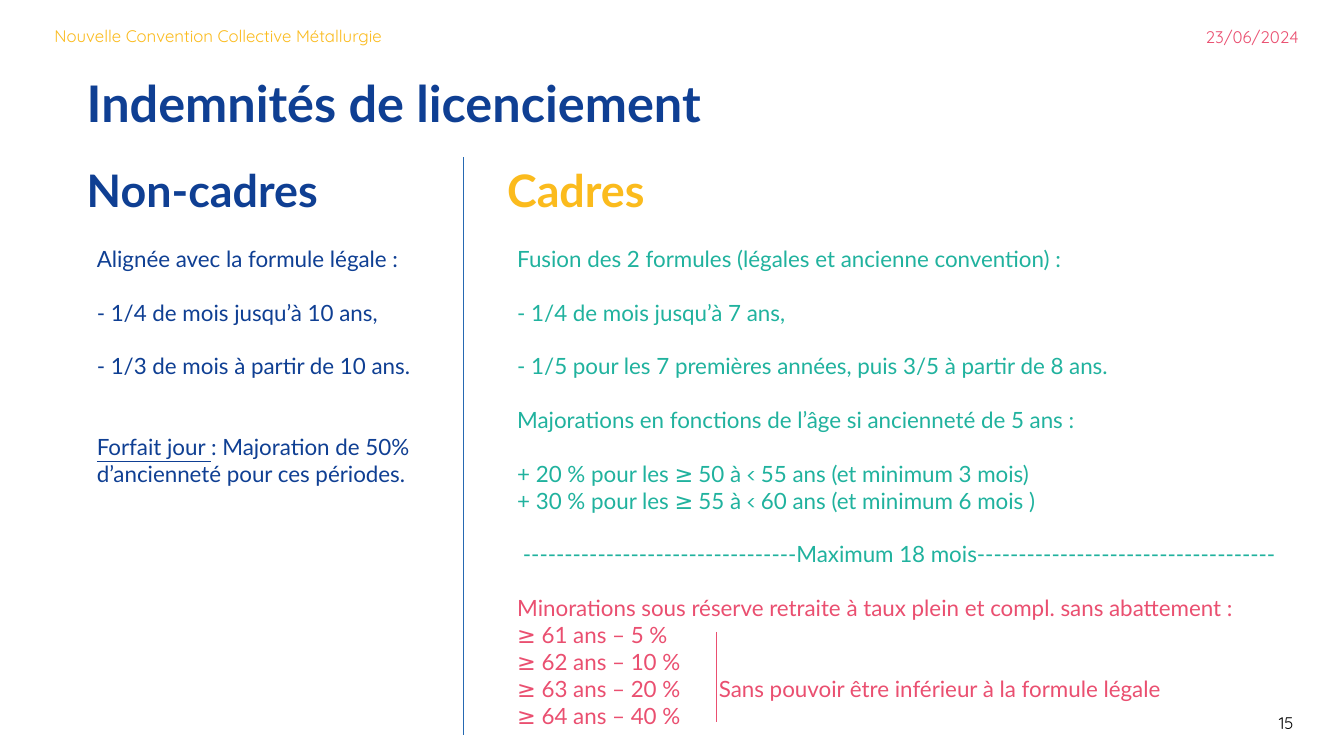
from dataclasses import dataclass

import lxml.etree
import pptx
import pptx.dml.color
import pptx.enum.shapes
import pptx.enum.text
import pptx.oxml.ns
import pptx.util
from pptx.util import Inches

Align = pptx.enum.text.PP_ALIGN


@dataclass(frozen=True)
class Theme:
    blue: str = "0F3F93"
    yellow: str = "FBBB1D"
    green: str = "20B29E"
    pink: str = "EA4F70"
    black: str = "000000"
    white: str = "FFFFFF"
    divider: str = "2669B2"
    text_font: str = "Lato"
    symbol_font: str = "Cabin"
    margin_font: str = "Quicksand"
    title_size: int = 36
    heading_size: int = 32
    body_size: int = 16
    margin_size: int = 12
    heading_spacing: int = 55
    blank_line: float = 19.2
    rule_width: float = 0.5
    frame_width: float = 0.75


THEME = Theme()


@dataclass(frozen=True)
class Span:
    text: str
    font: str = THEME.text_font
    underline: bool = False


@dataclass(frozen=True)
class Line:
    spans: tuple[Span, ...]
    color: str
    gap_lines: int = 0
    tab: float | None = None


@dataclass(frozen=True)
class Area:
    left: float
    top: float
    width: float
    height: float


@dataclass(frozen=True)
class Heading:
    placeholder: int
    text: str
    area: Area
    size: int
    color: str


@dataclass(frozen=True)
class Body:
    placeholder: int
    area: Area
    lines: tuple[Line, ...]


@dataclass(frozen=True)
class MarginText:
    text: str
    area: Area
    color: str
    align: Align
    inset: bool = True


@dataclass(frozen=True)
class Rule:
    left: float
    top: float
    bottom: float
    color: str


def plain(text: str, color: str, gap_lines: int = 0) -> Line:
    return Line((Span(text),), color, gap_lines)


def increase(percent: int, low: int, high: int, ending: str, gap_lines: int) -> Line:
    spans = (
        Span(f"+ {percent} % pour les "),
        Span("≥ ", THEME.symbol_font),
        Span(f"{low} à "),
        Span("< ", THEME.symbol_font),
        Span(f"{high} ans {ending}"),
    )
    return Line(spans, THEME.green, gap_lines)


def reduction(age: int, percent: int, remark: str = "") -> Line:
    spans = (Span("≥", THEME.symbol_font), Span(f" {age} ans – {percent} %{remark}"))
    return Line(spans, THEME.pink, tab=2.1 if remark else None)


HEADINGS = (
    Heading(0, "Indemnités de licenciement", Area(0.86, 0.55, 12.47, 0.83), THEME.title_size, THEME.blue),
    Heading(1, "Non-cadres", Area(0.86, 1.38, 5.38, 1.07), THEME.heading_size, THEME.blue),
    Heading(3, "Cadres", Area(5.03, 1.38, 7.3, 1.14), THEME.heading_size, THEME.yellow),
)

BODIES = (
    Body(2, Area(0.86, 2.38, 3.66, 2.79), (
        plain("Alignée avec la formule légale :", THEME.blue),
        plain("- 1/4 de mois jusqu’à 10 ans,", THEME.blue, 1),
        plain("- 1/3 de mois à partir de 10 ans.", THEME.blue, 1),
        Line((
            Span("Forfait jour ", underline=True),
            Span(": Majoration de 50% d’ancienneté pour ces périodes."),
        ), THEME.blue, 2),
    )),
    Body(4, Area(5.03, 2.38, 8.14, 5.49), (
        plain("Fusion des 2 formules (légales et ancienne convention) :", THEME.green),
        plain("- 1/4 de mois jusqu’à 7 ans,", THEME.green, 1),
        plain("- 1/5 pour les 7 premières années, puis 3/5 à partir de 8 ans.", THEME.green, 1),
        plain("Majorations en fonctions de l’âge si ancienneté de 5 ans :", THEME.green, 1),
        increase(20, 50, 55, "(et minimum 3 mois)", 1),
        increase(30, 55, 60, "(et minimum 6 mois )", 0),
        plain(" " + "-" * 33 + "Maximum 18 mois" + "-" * 36, THEME.green, 1),
        plain("Minorations sous réserve retraite à taux plein et compl. sans abattement :", THEME.pink, 1),
        reduction(61, 5),
        reduction(62, 10),
        reduction(63, 20, "\tSans pouvoir être inférieur à la formule légale"),
        reduction(64, 40),
    )),
)

MARGIN_TEXTS = (
    MarginText("Nouvelle Convention Collective Métallurgie", Area(0.54, 0.26, 6.25, 0.22), THEME.yellow, Align.LEFT, False),
    MarginText("23/06/2024", Area(10.2, 0.22, 2.78, 0.4), THEME.pink, Align.RIGHT),
    MarginText("15", Area(12.02, 7.02, 0.91, 0.27), THEME.black, Align.RIGHT),
)

RULES = (Rule(4.6, 1.56, 7.29, THEME.divider), Rule(7.11, 6.27, 7.16, THEME.pink))


def place(box, area: Area, inset: bool):
    box.left, box.top = Inches(area.left), Inches(area.top)
    box.width, box.height = Inches(area.width), Inches(area.height)
    frame = box.text_frame
    frame.word_wrap = True
    frame.auto_size = pptx.enum.text.MSO_AUTO_SIZE.NONE
    frame.vertical_anchor = pptx.enum.text.MSO_ANCHOR.TOP
    frame.margin_left = frame.margin_right = Inches(0.1 if inset else 0)
    frame.margin_top = frame.margin_bottom = Inches(0.05 if inset else 0)
    return frame


def set_line(item, color: str, width: float) -> None:
    item.line.color.rgb = pptx.dml.color.RGBColor.from_string(color)
    item.line.width = pptx.util.Pt(width)


def format_paragraph(para, align: Align = Align.LEFT, tab: float | None = None) -> None:
    properties = para._p.get_or_add_pPr()
    properties.set("marL", "0")
    properties.set("indent", "0")
    lxml.etree.SubElement(properties, pptx.oxml.ns.qn("a:buNone"))
    if tab is not None:
        tabs = lxml.etree.SubElement(properties, pptx.oxml.ns.qn("a:tabLst"))
        lxml.etree.SubElement(tabs, pptx.oxml.ns.qn("a:tab"), pos=str(Inches(tab)), algn="l")
    para.alignment = align
    para.space_before = pptx.util.Pt(0)


def add_span(para, span: Span, size: int, color: str, bold: bool = False) -> None:
    run = para.add_run()
    run.text = span.text
    run.font.name = span.font
    run.font.size = pptx.util.Pt(size)
    run.font.bold = bold
    run.font.underline = span.underline
    run.font.color.rgb = pptx.dml.color.RGBColor.from_string(color)


def draw_heading(page, heading: Heading) -> None:
    para = place(page.placeholders[heading.placeholder], heading.area, False).paragraphs[0]
    format_paragraph(para)
    para.line_spacing = pptx.util.Pt(THEME.heading_spacing)
    add_span(para, Span(heading.text), heading.size, heading.color, True)


def draw_body(page, body: Body) -> None:
    box = page.placeholders[body.placeholder]
    frame = place(box, body.area, True)
    set_line(box, THEME.white, THEME.frame_width)
    for index, line in enumerate(body.lines):
        para = frame.add_paragraph() if index else frame.paragraphs[0]
        format_paragraph(para, tab=line.tab)
        para.space_before = pptx.util.Pt(line.gap_lines * THEME.blank_line)
        for span in line.spans:
            add_span(para, span, THEME.body_size, line.color)


def draw_margin_text(page, item: MarginText) -> None:
    box = page.shapes.add_textbox(0, 0, 0, 0)
    para = place(box, item.area, item.inset).paragraphs[0]
    format_paragraph(para, item.align)
    add_span(para, Span(item.text, THEME.margin_font), THEME.margin_size, item.color)


def draw_rule(page, rule: Rule) -> None:
    connector = page.shapes.add_connector(
        pptx.enum.shapes.MSO_CONNECTOR.STRAIGHT,
        Inches(rule.left), Inches(rule.top), Inches(rule.left), Inches(rule.bottom))
    set_line(connector, rule.color, THEME.rule_width)
    lxml.etree.SubElement(connector._element.spPr, pptx.oxml.ns.qn("a:effectLst"))


def main() -> None:
    deck = pptx.Presentation()
    deck.slide_width, deck.slide_height = Inches(13.33), Inches(7.5)
    page = deck.slides.add_slide(deck.slide_layouts.get_by_name("Comparison"))
    for draw, items in ((draw_heading, HEADINGS), (draw_body, BODIES),
                        (draw_margin_text, MARGIN_TEXTS), (draw_rule, RULES)):
        for item in items:
            draw(page, item)
    deck.save("out.pptx")


if __name__ == "__main__":
    main()
